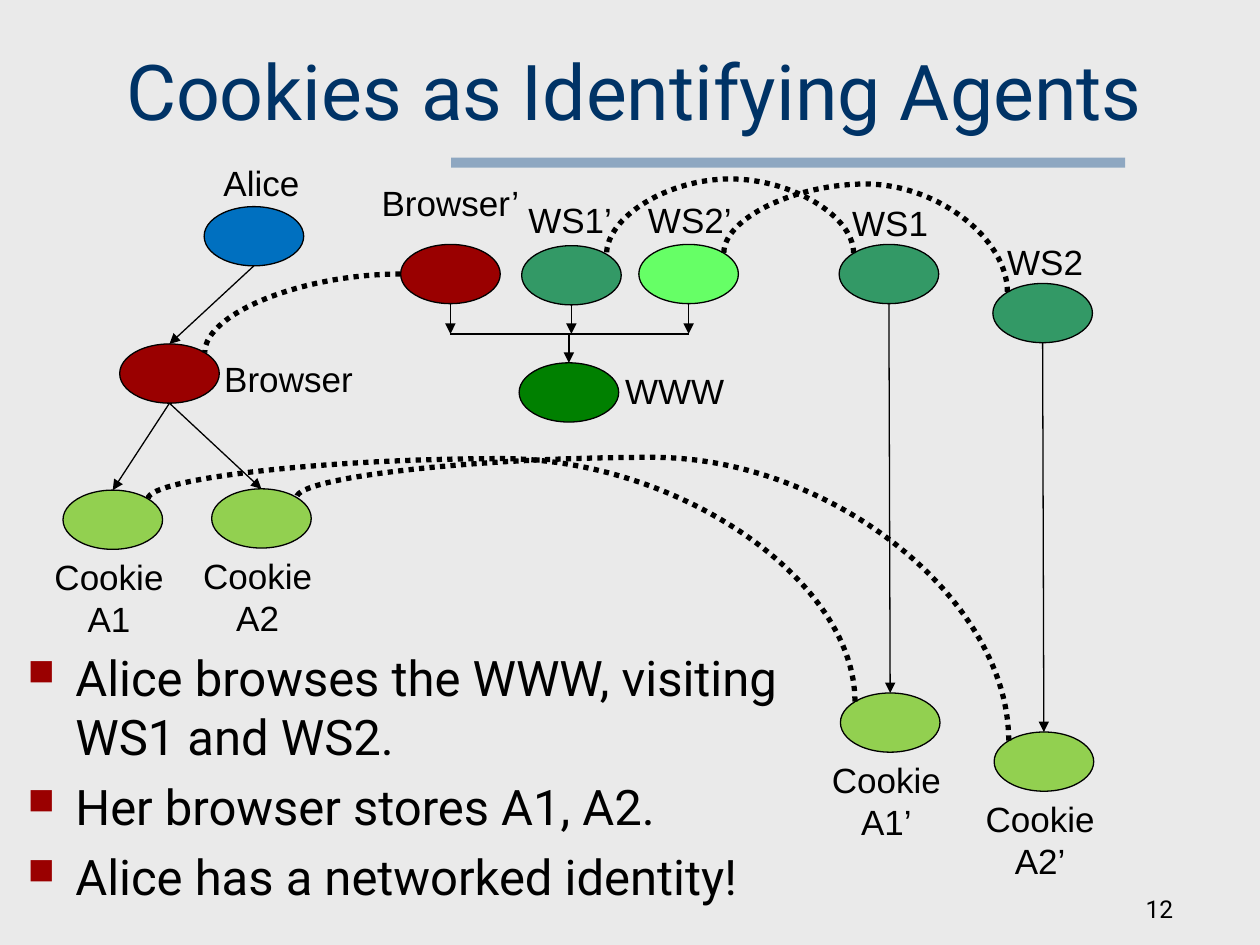
from dataclasses import dataclass

import lxml.etree
import pptx
import pptx.dml.color
import pptx.enum.dml
import pptx.enum.shapes
import pptx.enum.text
import pptx.oxml.ns
import pptx.util

Inches = pptx.util.Inches
Pt = pptx.util.Pt
qn = pptx.oxml.ns.qn
Align = pptx.enum.text.PP_ALIGN
Anchor = pptx.enum.text.MSO_ANCHOR
Connector = pptx.enum.shapes.MSO_CONNECTOR

NODE_WIDTH, NODE_HEIGHT = 0.79, 0.47
# Connection sites of an ellipse: number and place as fractions of its size
SITES = {"top": (0, 0.5, 0), "top left": (1, 0.146, 0.146), "left": (2, 0, 0.5),
         "bottom": (4, 0.5, 1), "top right": (7, 0.854, 0.146)}


@dataclass(frozen=True)
class Theme:
    background: str = "EAEAEA"
    title: str = "003366"
    bar: str = "336699"
    ink: str = "000000"
    user: str = "0070C0"
    browser: str = "9A0000"
    site: str = "339966"
    bright_site: str = "66FF66"
    web: str = "008000"
    cookie: str = "92D050"
    text_font: str = "Roboto"
    label_font: str = "Arial"
    title_size: int = 44
    body_size: int = 28
    label_size: int = 20
    number_size: int = 14


def color(value):
    return pptx.dml.color.RGBColor.from_string(value)


def add_xml(parent, tag, **attributes):
    return lxml.etree.SubElement(parent, qn(tag), attributes)


class SlideBuilder:
    def __init__(self, page, theme):
        self.page, self.theme = page, theme
        page.background.fill.solid()
        page.background.fill.fore_color.rgb = color(theme.background)

    def style(self, para, font, size, tint=None, align=Align.LEFT):
        para.alignment = align
        para.font.name, para.font.size = font, Pt(size)
        para.font.color.rgb = color(tint or self.theme.ink)

    def title(self, text, left, top, width, height):
        box = self.page.shapes.title
        box.left, box.top = Inches(left), Inches(top)
        box.width, box.height = Inches(width), Inches(height)
        box.text_frame.text = text
        box.text_frame.vertical_anchor = Anchor.MIDDLE
        self.style(box.text_frame.paragraphs[0], self.theme.text_font,
                   self.theme.title_size, self.theme.title)

    def frame(self, left, top, width, height):
        box = self.page.shapes.add_textbox(*map(Inches, (left, top, width, height)))
        box.text_frame.word_wrap = True
        return box.text_frame

    def label(self, text, left, top, width, height=0.44):
        frame = self.frame(left, top, width, height)
        frame.text = text
        self.style(frame.paragraphs[0], self.theme.label_font,
                   self.theme.label_size, align=Align.CENTER)

    def number(self, text, left, top, width, height):
        frame = self.frame(left, top, width, height)
        frame.text = text
        frame.vertical_anchor = Anchor.BOTTOM
        self.style(frame.paragraphs[0], self.theme.text_font,
                   self.theme.number_size, align=Align.RIGHT)

    def bullets(self, lines, left, top, width, height):
        frame = self.frame(left, top, width, height)
        for index, line in enumerate(lines):
            para = frame.add_paragraph() if index else frame.paragraphs[0]
            para.text = line
            properties = para._p.get_or_add_pPr()
            properties.set("marL", str(Inches(0.38)))
            properties.set("indent", str(-Inches(0.38)))
            if index:
                para.space_before = Pt(6.5)
            tint = add_xml(properties, "a:buClr")
            add_xml(tint, "a:srgbClr", val=self.theme.browser)
            add_xml(properties, "a:buSzPct", val="75000")
            add_xml(properties, "a:buChar", char="■")
            self.style(para, self.theme.text_font, self.theme.body_size)

    def shape(self, kind, fill, left, top, width, height):
        shape = self.page.shapes.add_shape(kind, *map(Inches, (left, top, width, height)))
        shape.shadow.inherit = False
        shape.fill.solid()
        shape.fill.fore_color.rgb = color(fill)
        return shape

    def bar(self, left, top, width, height):
        bar = self.shape(pptx.enum.shapes.MSO_SHAPE.RECTANGLE, self.theme.bar,
                         left, top, width, height)
        bar.line.fill.background()
        tint = bar._element.spPr.find(qn("a:solidFill"))[0]
        add_xml(tint, "a:alpha", val="50000")

    def node(self, fill, left, top):
        node = self.shape(pptx.enum.shapes.MSO_SHAPE.OVAL, fill,
                          left, top, NODE_WIDTH, NODE_HEIGHT)
        node.line.color.rgb = color(self.theme.ink)
        node.line.width = Pt(0.75)
        return node

    def line(self, start, end, arrow=False, kind=Connector.STRAIGHT, dotted=False):
        line = self.page.shapes.add_connector(kind, *start, *end)
        line.line.color.rgb = color(self.theme.ink)
        line.line.width = Pt(3 if dotted else 0.75)
        if dotted:
            line.line.dash_style = pptx.enum.dml.MSO_LINE.ROUND_DOT
        if arrow:
            add_xml(line.line._get_or_add_ln(), "a:tailEnd", type="triangle")
        add_xml(line._element.spPr, "a:effectLst")
        return line

    def link(self, start, start_site, end, end_site, **options):
        """Join two nodes at named sites."""
        ends = ((start, SITES[start_site]), (end, SITES[end_site]))
        points = [(int(node.left + node.width * across), int(node.top + node.height * down))
                  for node, (_, across, down) in ends]
        line = self.line(*points, **options)
        joints = line._element.find(".//" + qn("p:cNvCxnSpPr"))
        for tag, (node, site) in zip(("a:stCxn", "a:endCxn"), ends):
            add_xml(joints, tag, id=str(node.shape_id), idx=str(site[0]))
        return line, points

    def quarter_curve(self, start, end):
        line, _ = self.link(start, "left", end, "top right",
                            kind=Connector.CURVE, dotted=True)
        line._element.spPr.find(qn("a:prstGeom")).set("prst", "curvedConnector2")

    def arch(self, right, left, peak):
        """Dotted arch from the right node up to the peak and down to the left one."""
        line, ((x1, y1), (x2, y2)) = self.link(right, "top left", left, "top right",
                                               kind=Connector.CURVE, dotted=True)
        rise, span = y1 - y2, x1 - x2
        # A quarter turn swaps width and height around the same centre
        line.width, line.height = abs(rise), span
        line.left = (x1 + x2 - abs(rise)) // 2
        line.top = (y1 + y2 - span) // 2
        transform = line._element.spPr.find(qn("a:xfrm"))
        transform.set("rot", "16200000")
        transform.set("flipH", "1" if rise < 0 else "0")
        transform.set("flipV", "1")
        geometry = line._element.spPr.find(qn("a:prstGeom"))
        guides = geometry.find(qn("a:avLst"))
        if guides is None:
            guides = add_xml(geometry, "a:avLst")
        bend = round((y1 - Inches(peak)) / rise * 100000)
        add_xml(guides, "a:gd", name="adj1", fmla=f"val {bend}")


def main():
    deck = pptx.Presentation()
    deck.slide_width, deck.slide_height = Inches(10), Inches(7.5)
    theme = Theme()
    builder = SlideBuilder(deck.slides.add_slide(deck.slide_layouts[5]), theme)

    # Heading
    builder.bar(3.58, 1.25, 5.35, 0.08)
    builder.title("Cookies as Identifying Agents", 0.9, 0.25, 8.55, 0.92)

    # Agents: fill, node left and top, label left, top and width
    agents = {
        "Alice": (theme.user, 1.62, 1.64, 1.59, 1.23, 0.97),
        "Browser": (theme.browser, 0.95, 2.73, 1.55, 2.79, 1.48),
        "Browser’": (theme.browser, 3.18, 1.94, 2.87, 1.39, 1.41),
        "WS1’": (theme.site, 4.14, 1.95, 4.04, 1.53, 0.97),
        "WS2’": (theme.bright_site, 5.07, 1.94, 4.99, 1.53, 0.97),
        "WWW": (theme.web, 4.12, 2.88, 4.84, 2.88, 1.03),
        "WS1": (theme.site, 6.66, 1.94, 6.58, 1.55, 0.97),
        "WS2": (theme.site, 7.88, 2.25, 7.81, 1.86, 0.97),
    }
    nodes = {}
    for name, (fill, left, top, *label_place) in agents.items():
        nodes[name] = builder.node(fill, left, top)
        builder.label(name, *label_place)

    # Cookies, each with its label centred below
    cookies = {"Cookie A1": (0.5, 3.89), "Cookie A2": (1.68, 3.88),
               "Cookie A1’": (6.67, 5.5), "Cookie A2’": (7.89, 5.81)}
    for name, (left, top) in cookies.items():
        nodes[name] = builder.node(theme.cookie, left, top)
        builder.label(name, left - 0.21, top + NODE_HEIGHT, 1.15, 0.77)

    # Ownership arrows
    for parent, child in (("Alice", "Browser"), ("Browser", "Cookie A1"),
                          ("Browser", "Cookie A2"), ("WS1", "Cookie A1’"),
                          ("WS2", "Cookie A2’")):
        builder.link(nodes[parent], "bottom", nodes[child], "top", arrow=True)

    # Mirrored agents feed a shared rail that leads to the web
    rail = Inches(2.65)
    middle = {name: node.left + node.width // 2 for name, node in nodes.items()}
    for name in ("Browser’", "WS1’", "WS2’"):
        node = nodes[name]
        builder.line((middle[name], node.top + node.height), (middle[name], rail), arrow=True)
    for name in ("Browser’", "WS2’"):
        builder.line((middle[name], rail), (middle["WWW"], rail))
    builder.line((middle["WWW"], rail), (middle["WWW"], nodes["WWW"].top), arrow=True)

    # Dotted identity links
    builder.quarter_curve(nodes["Browser’"], nodes["Browser"])
    for right, left, peak in (("WS1", "WS1’", 1.41), ("WS2", "WS2’", 1.46),
                              ("Cookie A1’", "Cookie A1", 3.64),
                              ("Cookie A2’", "Cookie A2", 3.63)):
        builder.arch(nodes[right], nodes[left], peak)

    # Summary and slide number
    builder.bullets(("Alice browses the WWW, visiting WS1 and WS2.",
                     "Her browser stores A1, A2.",
                     "Alice has a networked identity!"), 0.12, 5.09, 6.69, 2.28)
    builder.number("12", 7.33, 6.88, 2.08, 0.5)
    deck.save("out.pptx")


if __name__ == "__main__":
    main()
